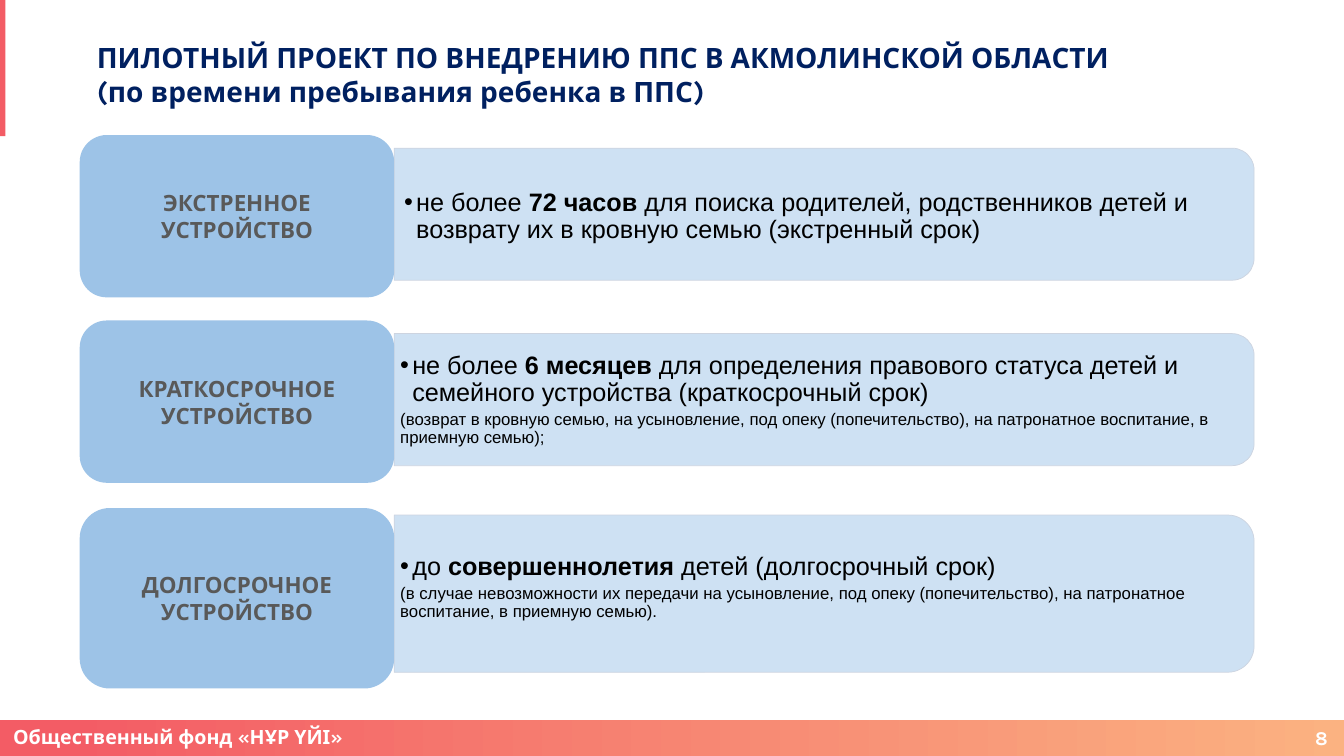
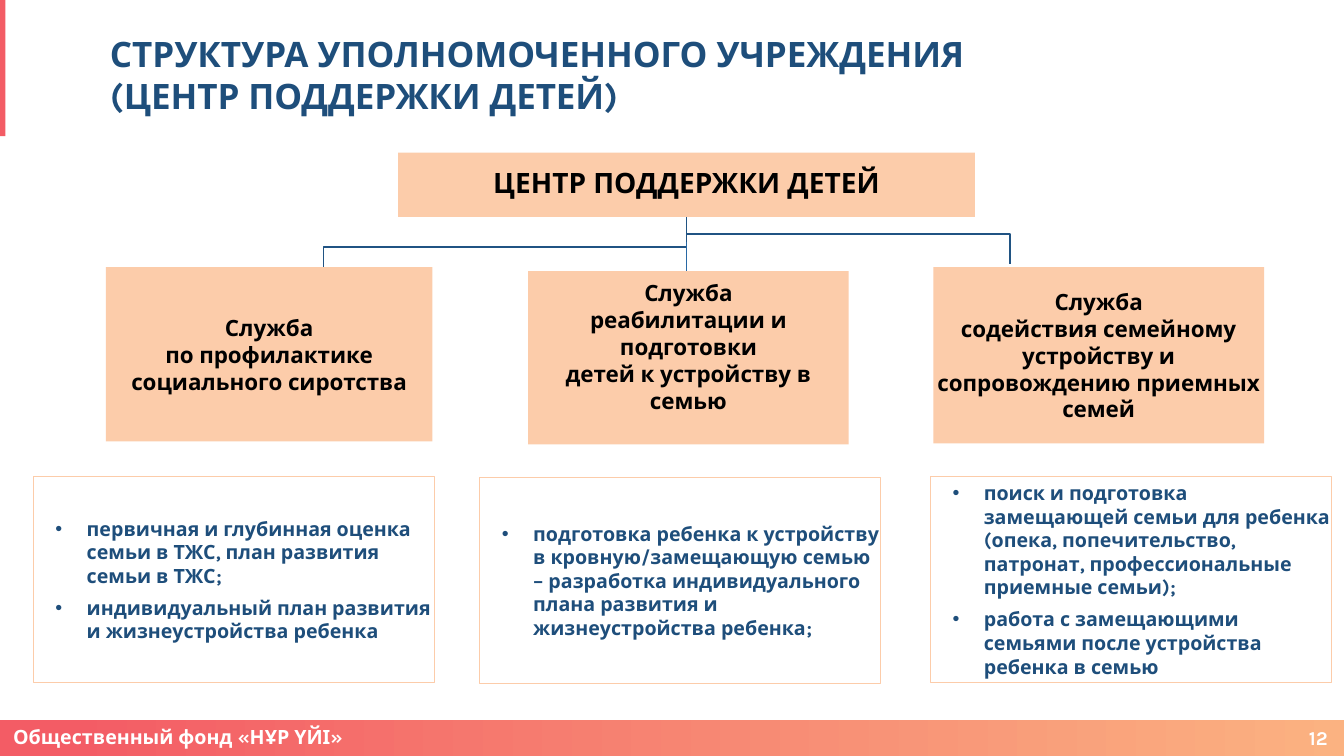
import dataclasses

import lxml.etree
import pptx
import pptx.dml.color
import pptx.enum.shapes
import pptx.enum.text
import pptx.oxml.ns
import pptx.util

RGBColor = pptx.dml.color.RGBColor
Shape = pptx.enum.shapes.MSO_SHAPE
Align = pptx.enum.text.PP_ALIGN
Pt = pptx.util.Pt
Inches = pptx.util.Inches

WIDTH = Inches(13.33)
HEIGHT = Inches(7.5)

WHITE = RGBColor(0xFF, 0xFF, 0xFF)
BLACK = RGBColor(0x00, 0x00, 0x00)
CORAL = RGBColor(0xF3, 0x5C, 0x65)
APRICOT = RGBColor(0xFB, 0xB2, 0x81)
PEACH = RGBColor(0xFC, 0xCC, 0xAA)
NAVY = RGBColor(0x00, 0x20, 0x60)
STEEL = RGBColor(0x1E, 0x4E, 0x7B)
BRANCH = RGBColor(0x20, 0x53, 0x83)
STEM = RGBColor(0x28, 0x68, 0xA4)
SKY = RGBColor(0x9D, 0xC3, 0xE7)
PALE_SKY = RGBColor(0xCE, 0xE1, 0xF3)
MIST = RGBColor(0xCD, 0xD4, 0xE0)
GRAY = RGBColor(0x59, 0x59, 0x59)


@dataclasses.dataclass
class Style:
    size: float
    color: RGBColor
    name: str = "Karla"
    bold: bool = True
    alignment: int = Align.LEFT
    line_spacing: float = 1.0
    space_after: float = 0
    indent: tuple = ()


FOOTER = Style(14, WHITE, line_spacing=0.9)
NUMBER = Style(14, WHITE, alignment=Align.RIGHT)
TERM = Style(16, GRAY, alignment=Align.CENTER)
RULE = Style(18, BLACK, "Arial", False, line_spacing=0.9, space_after=2.7,
             indent=(0.12, -0.12))
REMARK = Style(12, BLACK, "Arial", False, line_spacing=0.9, space_after=1.8)
CENTER = Style(20, BLACK, alignment=Align.CENTER, line_spacing=0.9)
SERVICE = Style(16, BLACK, alignment=Align.CENTER)
TASK = Style(14, STEEL, space_after=6, indent=(0.52, -0.31))

TIGHT = (0.01, 0.01, 0.01, 0.01)
TITLE_INSETS = (0.1, 0.05, 0.1, 0.05)

TERMS = [
    ("ЭКСТРЕННОЕ УСТРОЙСТВО", (17.87, 21.47), (19.6, 17.47), (0.1, 0.08, 0.1, 0.03),
     [("не более ", "72 часов",
       " для поиска родителей, родственников детей и возврату их в кровную семью "
       "(экстренный срок)")]),
    ("КРАТКОСРОЧНОЕ УСТРОЙСТВО", (42.4, 21.47), (44.13, 17.47), (0.06, 0.03, 0.06, 0.03),
     [("не более ", "6 месяцев ",
       "для определения правового статуса детей и семейного устройства "
       "(краткосрочный срок)"),
      ("(возврат в кровную семью, на усыновление, под опеку (попечительство), "
       "на патронатное воспитание, в приемную семью);",)]),
    ("ДОЛГОСРОЧНОЕ УСТРОЙСТВО", (67.2, 23.87), (68.13, 20.8), (0.06, 0.03, 0.06, 0.15),
     [("до ", "совершеннолетия ", "детей (долгосрочный срок)"),
      ("(в случае невозможности их передачи на усыновление, под опеку "
       "(попечительство), на патронатное воспитание, в приемную семью).",)]),
]

SERVICES = [
    ((7.88, 35.33, 24.3, 23.07), TIGHT,
     ["Служба", "по профилактике социального сиротства"],
     (2.48, 63.07),
     ["первичная и глубинная оценка семьи в ТЖС, план развития семьи в ТЖС;",
      "индивидуальный план развития и жизнеустройства ребенка"]),
    ((39.3, 35.87, 23.85, 22.93), (0.01, 0.01, 0.01, 0.23),
     ["Служба", "реабилитации и подготовки", "детей к устройству в семью"],
     (35.7, 63.2),
     ["подготовка ребенка к устройству в кровную/замещающую семью – разработка "
      "индивидуального плана развития и жизнеустройства ребенка;"]),
    ((69.45, 35.33, 24.6, 23.33), TIGHT,
     ["Служба", "содействия семейному устройству и сопровождению приемных семей"],
     (69.23, 63.07),
     ["поиск и подготовка замещающей семьи для ребенка (опека, попечительство, "
      "патронат, профессиональные приемные семьи);",
      "работа с замещающими семьями после устройства ребенка в семью"]),
]


def across(percent):
    return round(WIDTH * percent / 100)


def down(percent):
    return round(HEIGHT * percent / 100)


def area(left, top, width, height):
    return across(left), down(top), across(width), down(height)


def assign(target, formats):
    for name, value in formats.items():
        setattr(target, name, value)


def add_bullet(para, margin, hanging):
    properties = para._p.get_or_add_pPr()
    properties.set("marL", str(Inches(margin)))
    properties.set("indent", str(Inches(hanging)))
    namespace = pptx.oxml.ns.qn
    lxml.etree.SubElement(properties, namespace("a:buFont")).set("typeface", "Arial")
    lxml.etree.SubElement(properties, namespace("a:buChar")).set("char", "•")


def write(box, lines, insets):
    frame = box.text_frame
    left, top, right, bottom = map(Inches, insets)
    assign(frame, {
        "word_wrap": True,
        "auto_size": pptx.enum.text.MSO_AUTO_SIZE.NONE,
        "vertical_anchor": pptx.enum.text.MSO_ANCHOR.MIDDLE,
        "margin_left": left, "margin_top": top,
        "margin_right": right, "margin_bottom": bottom,
    })
    for index, (pieces, style) in enumerate(lines):
        para = frame.add_paragraph() if index else frame.paragraphs[0]
        if style.indent:
            add_bullet(para, *style.indent)
        assign(para, {
            "alignment": style.alignment,
            "line_spacing": style.line_spacing,
            "space_before": Pt(0),
            "space_after": Pt(style.space_after),
        })
        for position, piece in enumerate(pieces):
            span = para.add_run()
            span.text = piece
            assign(span.font, {
                "name": style.name,
                "size": Pt(style.size),
                "bold": style.bold or position == 1,
            })
            span.font.color.rgb = style.color


def styled(texts, style):
    return [((text,), style) for text in texts]


def set_line(line, color, width):
    line.color.rgb = color
    line.width = Pt(width)


def add_panel(page, kind, place, fill=None, line=None):
    panel = page.shapes.add_shape(kind, *place)
    panel.shadow.inherit = False
    if fill is None:
        panel.fill.background()
    else:
        panel.fill.solid()
        panel.fill.fore_color.rgb = fill
    if line is None:
        panel.line.fill.background()
    else:
        set_line(panel.line, *line)
    return panel


def add_branch(page, points):
    corners = [(across(x), down(y)) for x, y in points]
    builder = page.shapes.build_freeform(*corners[0])
    builder.add_line_segments(corners[1:], close=False)
    branch = builder.convert_to_shape()
    branch.shadow.inherit = False
    branch.fill.background()
    set_line(branch.line, BRANCH, 1)


def add_stem(page, x, top, bottom):
    stem = page.shapes.add_connector(
        pptx.enum.shapes.MSO_CONNECTOR.STRAIGHT,
        across(x), down(top), across(x), down(bottom))
    lxml.etree.SubElement(stem._element.spPr, pptx.oxml.ns.qn("a:effectLst"))
    set_line(stem.line, STEM, 0.5)


def decorate_layout(layout, page):
    band = add_panel(page, Shape.RECTANGLE, area(0, 95.2, 100, 4.8), CORAL)
    band.fill.gradient()
    band.fill.gradient_angle = 0
    for stop, color, position in zip(band.fill.gradient_stops, (CORAL, APRICOT), (0.05, 1)):
        stop.color.rgb = color
        stop.position = position
    write(band, styled(["Общественный фонд «НҰР ҮЙІ»"], FOOTER), (0.13, 0, 0, 0))
    accent = add_panel(page, Shape.RECTANGLE, area(0, 0, 0.4, 18), CORAL)
    for index, mark in enumerate((band, accent)):
        mark._element.nvSpPr.cNvPr.set("id", str(100 + index))
        layout.shapes.element.insert(2 + index, mark._element)


def add_heading(page, left, lines, style, number):
    title = page.shapes.title
    place = area(left, 3.87, 79.43, 11.87)
    assign(title, dict(zip(("left", "top", "width", "height"), place)))
    write(title, styled(lines, style), TITLE_INSETS)
    label = page.shapes.add_textbox(*area(95.4, 95.87, 4.13, 3.47))
    write(label, styled([number], NUMBER), (0, 0, 0.1, 0))


def add_term(page, label, tab_rows, bar_rows, insets, lines):
    bar_top, bar_height = bar_rows
    left, top, width, height = area(29.33, bar_top, 63.98, bar_height)
    turned = (left + (width - height) // 2, top + (height - width) // 2, height, width)
    bar = add_panel(page, Shape.ROUND_2_SAME_RECTANGLE, turned, PALE_SKY, (MIST, 0.5))
    bar.rotation = 90
    text = page.shapes.add_textbox(*area(29.33, bar_top, 63.3, bar_height))
    write(text, list(zip(lines, (RULE, REMARK))), insets)
    tab_top, tab_height = tab_rows
    tab = add_panel(page, Shape.ROUNDED_RECTANGLE, area(5.93, tab_top, 23.4, tab_height), SKY)
    write(tab, styled([label], TERM), (0.08, 0.04, 0.08, 0.04))


def add_service(page, place, insets, name, list_corner, tasks):
    service = add_panel(page, Shape.RECTANGLE, area(*place), PEACH)
    write(service, styled(name, SERVICE), insets)
    frame = add_panel(page, Shape.RECTANGLE, area(*list_corner, 29.83, 27.2),
                      line=(PEACH, 0.75))
    write(frame, styled(tasks, TASK), TIGHT)


def build_terms(page):
    add_heading(page, 6.45,
                ["ПИЛОТНЫЙ ПРОЕКТ ПО ВНЕДРЕНИЮ ППС В АКМОЛИНСКОЙ ОБЛАСТИ",
                 "(по времени пребывания ребенка в ППС)"],
                Style(20, NAVY), "8")
    for term in TERMS:
        add_term(page, *term)


def build_structure(page):
    add_heading(page, 7.43,
                ["СТРУКТУРА УПОЛНОМОЧЕННОГО УЧРЕЖДЕНИЯ", "(ЦЕНТР ПОДДЕРЖКИ ДЕТЕЙ)"],
                Style(25, STEEL), "12")
    trunk, start = 51.08, 28.67
    for x, turn, end in ((75.15, 30.93, 34.93), (24.08, 32.67, 36.67)):
        add_branch(page, [(trunk, start), (trunk, turn), (x, turn), (x, end)])
    add_stem(page, trunk, 32, 35.87)
    center = add_panel(page, Shape.RECTANGLE, area(29.63, 20.2, 42.9, 8.5), PEACH)
    write(center, styled(["ЦЕНТР ПОДДЕРЖКИ ДЕТЕЙ"], CENTER), TIGHT)
    for service in SERVICES:
        add_service(page, *service)


def main():
    deck = pptx.Presentation()
    deck.slide_width = WIDTH
    deck.slide_height = HEIGHT
    layout = deck.slide_layouts.get_by_name("Title Only")
    pages = [deck.slides.add_slide(layout) for _ in range(2)]
    decorate_layout(layout, pages[0])
    for build, page in zip((build_terms, build_structure), pages):
        build(page)
    deck.save("out.pptx")


if __name__ == "__main__":
    main()
